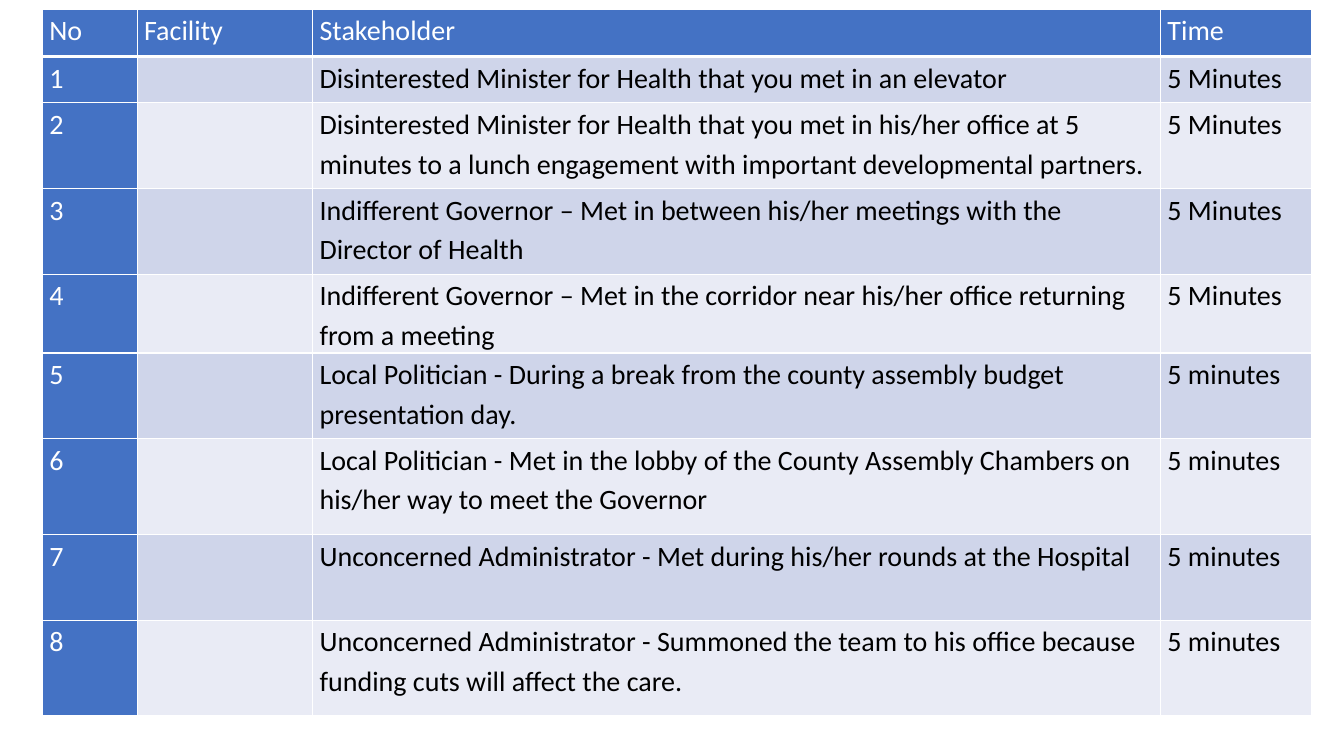
from lxml import etree
from pptx import Presentation
from pptx.dml.color import RGBColor
from pptx.oxml.ns import qn
from pptx.util import Inches, Pt

HEADER = ("No", "Facility", "Stakeholder", "Time")
MEETINGS = [
    ("Disinterested Minister for Health that you met in an elevator", "5 Minutes"),
    ("Disinterested Minister for Health that you met in his/her office at 5 minutes "
     "to a lunch engagement with important developmental partners.", "5 Minutes"),
    ("Indifferent Governor – Met in between his/her meetings with the Director of Health",
     "5 Minutes"),
    ("Indifferent Governor – Met in the corridor near his/her office returning from a meeting",
     "5 Minutes"),
    ("Local Politician - During a break from the county assembly budget presentation day.",
     "5 minutes"),
    ("Local Politician - Met in the lobby of the County Assembly Chambers on his/her way "
     "to meet the Governor", "5 minutes"),
    ("Unconcerned Administrator - Met during his/her rounds at the Hospital", "5 minutes"),
    ("Unconcerned Administrator - Summoned the team to his office because funding cuts "
     "will affect the care.", "5 minutes"),
]
ROWS = [HEADER] + [(str(number), "", stakeholder, time)
                   for number, (stakeholder, time) in enumerate(MEETINGS, 1)]

LEFT, TOP = 0.42, 0.09
COLUMN_WIDTHS = (0.94, 1.74, 8.41, 1.5)
ROW_HEIGHTS = (0.47, 0.46, 0.85, 0.85, 0.62, 0.85, 0.95, 0.85, 0.95)

WHITE = RGBColor(0xFF, 0xFF, 0xFF)
BLACK = RGBColor(0, 0, 0)
BLUE = RGBColor(0x44, 0x72, 0xC4)
BANDS = (RGBColor(0xE9, 0xEB, 0xF5), RGBColor(0xCF, 0xD5, 0xEA))

MARGINS = {"margin_left": Inches(0.07), "margin_right": Inches(0.07),
           "margin_top": 0, "margin_bottom": 0}
FONT = {"name": "Calibri", "size": Pt(20), "bold": False}


def set_attributes(target, values):
    for name, value in values.items():
        setattr(target, name, value)


def add_borders(cell, bottom_width):
    """Draw white cell edges; the edges must precede the fill in the XML."""
    properties = cell._tc.get_or_add_tcPr()
    widths = {"a:lnL": 1, "a:lnR": 1, "a:lnT": 1, "a:lnB": bottom_width}
    for position, (tag, width) in enumerate(widths.items()):
        line = etree.Element(qn(tag), w=str(Pt(width)))
        fill = etree.SubElement(line, qn("a:solidFill"))
        etree.SubElement(fill, qn("a:srgbClr"), val=str(WHITE))
        properties.insert(position, line)


def format_cell(cell, text, row, column):
    is_heading = row == 0 or column == 0
    cell.fill.solid()
    cell.fill.fore_color.rgb = BLUE if is_heading else BANDS[row % 2]
    add_borders(cell, 3 if row == 0 else 1)
    if text:
        set_attributes(cell, MARGINS)
        paragraph = cell.text_frame.paragraphs[0]
        paragraph.line_spacing = 1.15
        run = paragraph.add_run()
        run.text = text
        set_attributes(run.font, FONT)
        run.font.color.rgb = WHITE if is_heading else BLACK


def main():
    presentation = Presentation()
    presentation.slide_width, presentation.slide_height = Inches(13.33), Inches(7.5)
    blank_layout = presentation.slide_layouts[6]
    slide = presentation.slides.add_slide(blank_layout)
    table = slide.shapes.add_table(
        len(ROWS), len(HEADER), Inches(LEFT), Inches(TOP),
        Inches(sum(COLUMN_WIDTHS)), Inches(sum(ROW_HEIGHTS))).table
    for column, width in zip(table.columns, COLUMN_WIDTHS):
        column.width = Inches(width)
    for row, height in zip(table.rows, ROW_HEIGHTS):
        row.height = Inches(height)
    for row, texts in enumerate(ROWS):
        for column, text in enumerate(texts):
            format_cell(table.cell(row, column), text, row, column)
    presentation.save("out.pptx")


if __name__ == "__main__":
    main()
